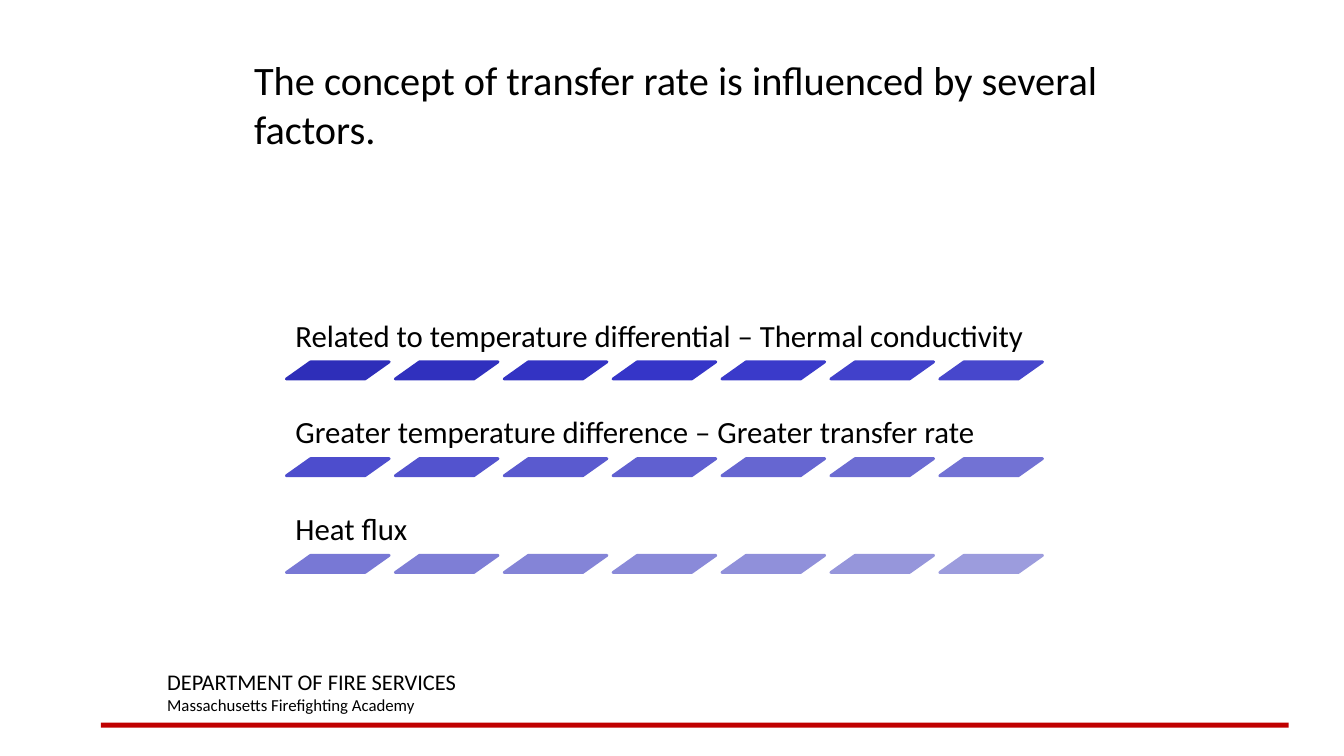
from dataclasses import dataclass

from pptx import Presentation
from pptx.dml.color import RGBColor
from pptx.enum.shapes import MSO_SHAPE as Shape
from pptx.enum.text import MSO_ANCHOR as Anchor, MSO_AUTO_SIZE as AutoSize, PP_ALIGN as Align
from pptx.slide import Slide
from pptx.text.text import TextFrame
from pptx.util import Inches, Pt


@dataclass(frozen=True)
class Theme:
    """Colours, font and type sizes of the slide."""
    font: str = "Calibri"
    ink: str = "000000"
    rule: str = "C00000"
    title: float = 28.8
    factor: float = 22
    department: float = 16
    academy: float = 12


@dataclass(frozen=True)
class Factor:
    """A factor and the colours of the dashes under it."""
    label: str
    tints: tuple[str, ...]


THEME = Theme()
FACTORS = (
    Factor("Related to temperature differential – Thermal conductivity",
           ("2E2EB9", "3030BE", "3333C3", "3535C8", "3A3ACA", "4141CB", "4747CC")),
    Factor("Greater temperature difference – Greater transfer rate",
           ("4D4DCD", "5353CE", "5A5ACF", "6060D0", "6666D1", "6C6CD2", "7272D4")),
    Factor("Heat flux",
           ("7878D5", "7E7ED6", "8484D7", "8A8AD9", "9090DA", "9696DB", "9C9CDD")),
)
FACTOR_LEFT, FACTOR_TOP, FACTOR_PITCH = 2.84, 2.9, 0.96
DASH_OFFSET, DASH_PITCH = 0.69, 1.08


def write(frame: TextFrame, lines: dict[str, float]) -> None:
    """Fill a frame with left-aligned lines of the given sizes."""
    frame.word_wrap = True
    frame.text = "\n".join(lines)
    for para, size in zip(frame.paragraphs, lines.values()):
        para.alignment = Align.LEFT
        for span in para.runs:
            span.font.name = THEME.font
            span.font.size = Pt(size)
            span.font.color.rgb = RGBColor.from_string(THEME.ink)


def add_title(slide: Slide) -> None:
    """Place and format the title."""
    title = slide.shapes.title
    title.left, title.top = Inches(2.42), Inches(0.5)
    title.width, title.height = Inches(8.58), Inches(1)
    frame = title.text_frame
    write(frame, {"The concept of transfer rate is influenced by several factors.": THEME.title})
    frame.auto_size = AutoSize.NONE
    frame.vertical_anchor = Anchor.TOP


def add_footer(slide: Slide) -> None:
    """Draw the red rule and the department's name."""
    rule = slide.shapes.add_shape(
        Shape.RECTANGLE, Inches(1), Inches(7.17), Inches(11.78), Inches(0.05))
    rule.shadow.inherit = False
    rule.fill.solid()
    rule.fill.fore_color.rgb = RGBColor.from_string(THEME.rule)
    rule.line.fill.background()
    box = slide.shapes.add_textbox(Inches(1.56), Inches(6.58), Inches(5.67), Inches(0.57))
    write(box.text_frame, {
        "DEPARTMENT OF FIRE SERVICES": THEME.department,
        "Massachusetts Firefighting Academy": THEME.academy,
    })


def add_dash(slide: Slide, left: float, top: float, tint: str) -> None:
    """Draw one slanted dash."""
    dash = slide.shapes.add_shape(
        Shape.PARALLELOGRAM, Inches(left), Inches(top), Inches(1.02), Inches(0.17))
    dash.adjustments[0] = 1.41
    dash.shadow.inherit = False
    dash.fill.solid()
    dash.fill.fore_color.rgb = RGBColor.from_string(tint)
    dash.line.color.rgb = RGBColor.from_string(tint)
    dash.line.width = Pt(2)


def add_factor(slide: Slide, factor: Factor, top: float) -> None:
    """Draw a factor's label above its row of dashes."""
    box = slide.shapes.add_textbox(
        Inches(FACTOR_LEFT), Inches(top), Inches(7.65), Inches(0.7))
    frame = box.text_frame
    write(frame, {factor.label: THEME.factor})
    frame.paragraphs[0].line_spacing = 0.9
    frame.vertical_anchor = Anchor.BOTTOM
    frame.margin_left = frame.margin_right = Inches(0.09)
    frame.margin_top = frame.margin_bottom = Inches(0.09)
    for column, tint in enumerate(factor.tints):
        add_dash(slide, FACTOR_LEFT + column * DASH_PITCH, top + DASH_OFFSET, tint)


def main() -> None:
    """Build and save the slide."""
    deck = Presentation()
    deck.slide_width, deck.slide_height = Inches(13.33), Inches(7.5)
    slide = deck.slides.add_slide(deck.slide_layouts[5])
    add_footer(slide)
    for row, factor in enumerate(FACTORS):
        add_factor(slide, factor, FACTOR_TOP + row * FACTOR_PITCH)
    add_title(slide)
    deck.save("out.pptx")


if __name__ == "__main__":
    main()
